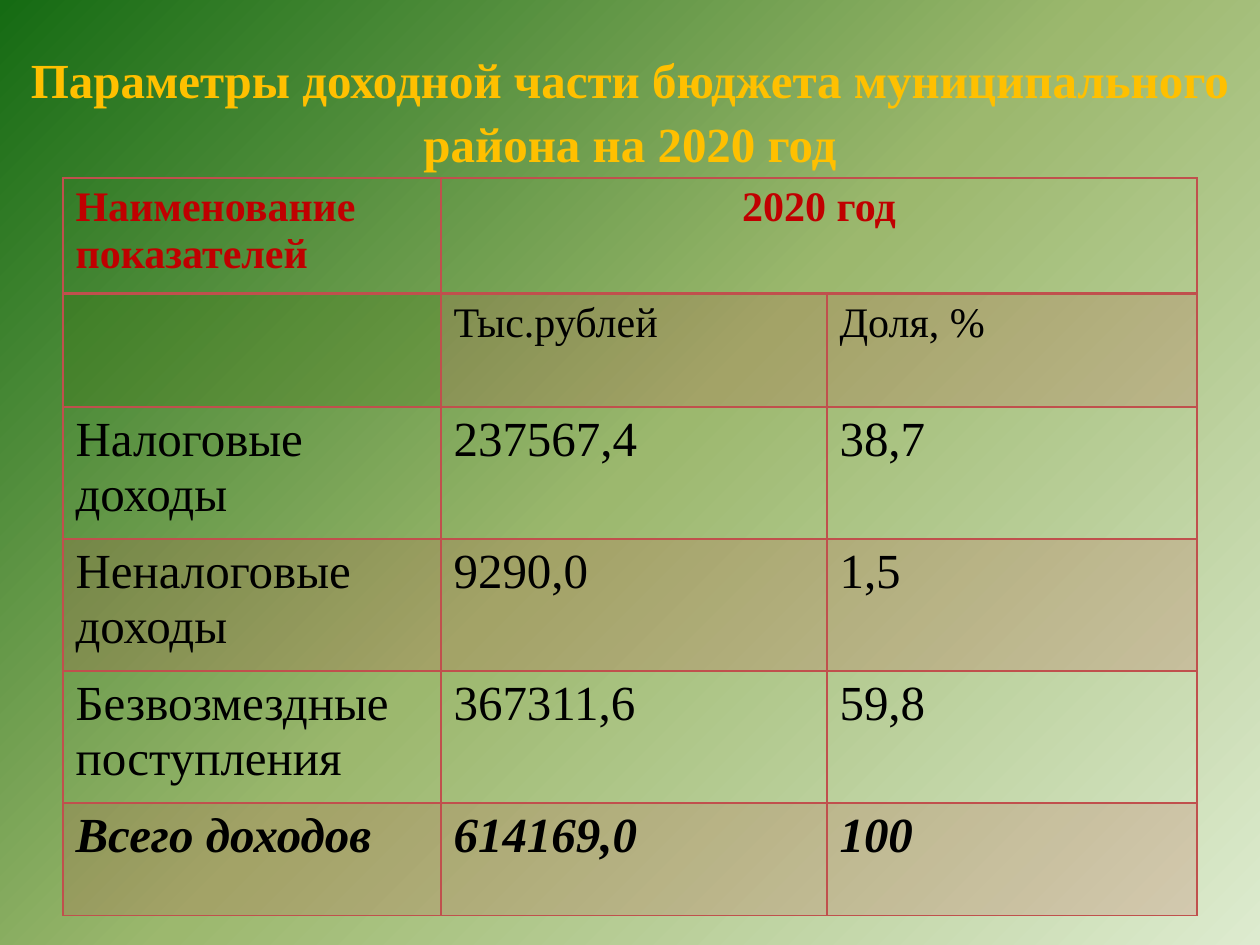
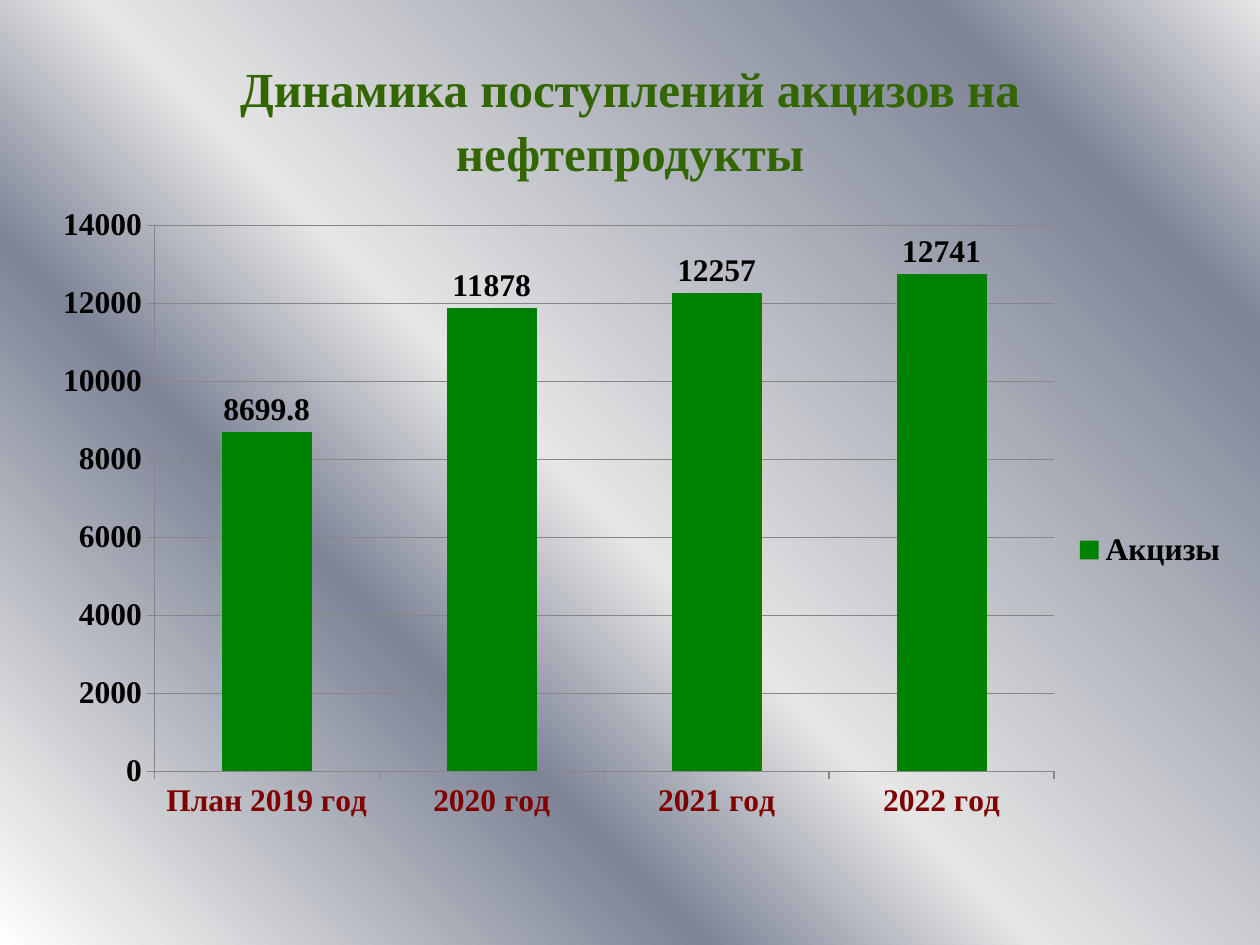
from lxml import etree
from pptx import Presentation
from pptx.chart.data import CategoryChartData
from pptx.dml.color import RGBColor
from pptx.enum.chart import XL_CHART_TYPE, XL_LABEL_POSITION, XL_LEGEND_POSITION, XL_TICK_MARK
from pptx.enum.text import MSO_ANCHOR, PP_ALIGN
from pptx.oxml import parse_xml
from pptx.oxml.ns import nsdecls, qn
from pptx.util import Emu, Pt

CENTER, LEFT = PP_ALIGN.CENTER, PP_ALIGN.LEFT
MIDDLE = MSO_ANCHOR.MIDDLE
COLUMNS = XL_CHART_TYPE.COLUMN_CLUSTERED
LEGEND_RIGHT = XL_LEGEND_POSITION.RIGHT
LABEL_ABOVE = XL_LABEL_POSITION.OUTSIDE_END
TICK_CROSS = XL_TICK_MARK.CROSS

FONT = "Times New Roman"
BLACK, GOLD, DARK_GREEN = "000000", "FFC000", "336600"
RED, BRICK, MAROON = "C00000", "C0504D", "800000"
BAR_GREEN, AXIS_GRAY = "008000", "868686"
GREEN_GRADIENT = [(0, "DDEBCF"), (50, "9CB86E"), (100, "156B13")]
SILVER_GRADIENT = [(0, "FFFFFF"), (7, "E6E6E6"), (32, "7D8496"),
                   (47, "E6E6E6"), (85, "7D8496"), (100, "E6E6E6")]


def px(length):
    return Emu(round(length * 914400 / 126))


def color(value):
    return RGBColor.from_string(value)


def style_font(font, size=18, fill=BLACK, bold=True, italic=False):
    font.name = FONT
    font.size = Pt(size)
    font.bold = bold
    font.italic = italic
    font.color.rgb = color(fill)


def write_text(frame, text, align=LEFT, spacing=None, **font_format):
    paragraph = frame.paragraphs[0]
    paragraph.alignment = align
    paragraph.line_spacing = spacing
    run = paragraph.add_run()
    run.text = text
    style_font(run.font, **font_format)


class Deck:
    def __init__(self, width, height):
        self.presentation = Presentation()
        self.presentation.slide_width = px(width)
        self.presentation.slide_height = px(height)
        self.slide = None

    def add_slide(self, stops, angle):
        self.slide = self.presentation.slides.add_slide(self.presentation.slide_layouts[6])
        fill = self.slide.background.fill
        fill.gradient()
        fill.gradient_angle = 360 - angle
        stop_list = next(self.slide.element.iter(qn("a:gsLst")))
        for stop in list(stop_list):
            stop_list.remove(stop)
        for position, value in stops:
            stop = etree.SubElement(stop_list, qn("a:gs"), pos=str(position * 1000))
            etree.SubElement(stop, qn("a:srgbClr"), val=value)

    def add_title(self, text, left, top, width, fill):
        box = self.slide.shapes.add_textbox(px(left), px(top), px(width), px(158))
        frame = box.text_frame
        frame.word_wrap = True
        frame.vertical_anchor = MIDDLE
        write_text(frame, text, align=CENTER, spacing=1.1, size=28, fill=fill)

    def add_table(self, left, top, widths, heights):
        frame = self.slide.shapes.add_table(
            len(heights), len(widths), px(left), px(top), px(sum(widths)), px(sum(heights)))
        table = frame.table
        table.first_row = False
        table.horz_banding = False
        for column, width in zip(table.columns, widths):
            column.width = px(width)
        for row, height in zip(table.rows, heights):
            row.height = px(height)
        return table

    def style_cell(self, cell, tint=None, top=1, bottom=1):
        if tint:
            cell.fill.solid()
            cell.fill.fore_color.rgb = color(tint)
        else:
            cell.fill.background()
        properties = cell._tc.get_or_add_tcPr()
        for tint_color in properties.iter(qn("a:srgbClr")):
            etree.SubElement(tint_color, qn("a:alpha"), val="20000")
        borders = [("lnL", 1), ("lnR", 1), ("lnT", top), ("lnB", bottom)]
        for index, (side, points) in enumerate(borders):
            properties.insert(index, parse_xml(
                f'<a:{side} {nsdecls("a")} w="{Pt(points)}"><a:solidFill>'
                f'<a:srgbClr val="{BRICK}"/></a:solidFill></a:{side}>'))

    def add_column_chart(self, left, top, width, height, categories, name, values, plot):
        data = CategoryChartData()
        data.categories = categories
        data.add_series(name, values)
        chart = self.slide.shapes.add_chart(
            COLUMNS, px(left), px(top), px(width), px(height), data).chart
        chart.has_title = False
        chart.font.name = "Calibri"
        chart.font.size = Pt(18)
        chart.font.color.rgb = color(BLACK)
        self.style_axis(chart.category_axis, MAROON)
        self.style_axis(chart.value_axis, BLACK)
        chart.value_axis.minimum_scale = 0
        chart.value_axis.maximum_scale = 14000
        chart.value_axis.major_unit = 2000
        chart.value_axis.major_gridlines.format.line.color.rgb = color(AXIS_GRAY)
        chart.has_legend = True
        chart.legend.position = LEGEND_RIGHT
        chart.legend.include_in_layout = False
        style_font(chart.legend.font)
        columns = chart.plots[0]
        columns.gap_width = 150
        columns.vary_by_categories = False
        series = columns.series[0]
        series.format.fill.solid()
        series.format.fill.fore_color.rgb = color(BAR_GREEN)
        labels = series.data_labels
        labels.show_value = True
        labels.position = LABEL_ABOVE
        style_font(labels.font)
        self.place_plot(chart, plot)

    def style_axis(self, axis, fill):
        axis.major_tick_mark = TICK_CROSS if axis.has_major_gridlines else XL_TICK_MARK.OUTSIDE
        axis.format.line.color.rgb = color(AXIS_GRAY)
        style_font(axis.tick_labels.font, fill=fill)

    def place_plot(self, chart, plot):
        plot_area = next(chart.element.iter(qn("c:plotArea")))
        for layout in plot_area.findall(qn("c:layout")):
            plot_area.remove(layout)
        layout = etree.Element(qn("c:layout"))
        manual = etree.SubElement(layout, qn("c:manualLayout"))
        settings = [("layoutTarget", "inner"), ("xMode", "edge"), ("yMode", "edge")]
        for tag, value in settings + list(zip("xywh", plot)):
            etree.SubElement(manual, qn(f"c:{tag}"), val=str(value))
        plot_area.insert(0, layout)


def build_income_slide(deck):
    deck.add_slide(GREEN_GRADIENT, 225)
    deck.add_title("Параметры доходной части бюджета муниципального района на 2020 год",
                   0, 29, 1260, GOLD)
    rows = [
        ("Наименование показателей", "2020 год", ""),
        ("", "Тыс.рублей", "Доля, %"),
        ("Налоговые доходы", "237567,4", "38,7"),
        ("Неналоговые доходы", "9290,0", "1,5"),
        ("Безвозмездные поступления", "367311,6", "59,8"),
        ("Всего доходов", "614169,0", "100"),
    ]
    header, units, total = 0, 1, len(rows) - 1
    table = deck.add_table(63, 178, [378, 386, 370], [116, 113, 132, 132, 132, 113])
    table.cell(header, 1).merge(table.cell(header, 2))
    for row, texts in enumerate(rows):
        for column, text in enumerate(texts):
            cell = table.cell(row, column)
            tint = BRICK if row % 2 else None
            if row == units and column == 0:
                tint = DARK_GREEN
            deck.style_cell(cell, tint, top=2 if row == units else 1,
                            bottom=2 if row == header else 1)
            if text:
                write_text(cell.text_frame, text,
                           align=CENTER if row == header and column else LEFT,
                           size=24 if row <= units else 28,
                           fill=RED if row == header else BLACK,
                           bold=row in (header, total), italic=row == total)


def build_excise_slide(deck):
    deck.add_slide(SILVER_GRADIENT, 315)
    deck.add_title("Динамика поступлений акцизов на нефтепродукты", 63, 38, 1134, DARK_GREEN)
    deck.add_column_chart(
        20, 186, 1221, 728,
        ["План 2019 год", "2020 год", "2021 год", "2022 год"],
        "Акцизы", [8699.8, 11878, 12257, 12741],
        plot=(0.11, 0.054, 0.737, 0.75))


def main():
    deck = Deck(1260, 945)
    build_income_slide(deck)
    build_excise_slide(deck)
    deck.presentation.save("out.pptx")


if __name__ == "__main__":
    main()
